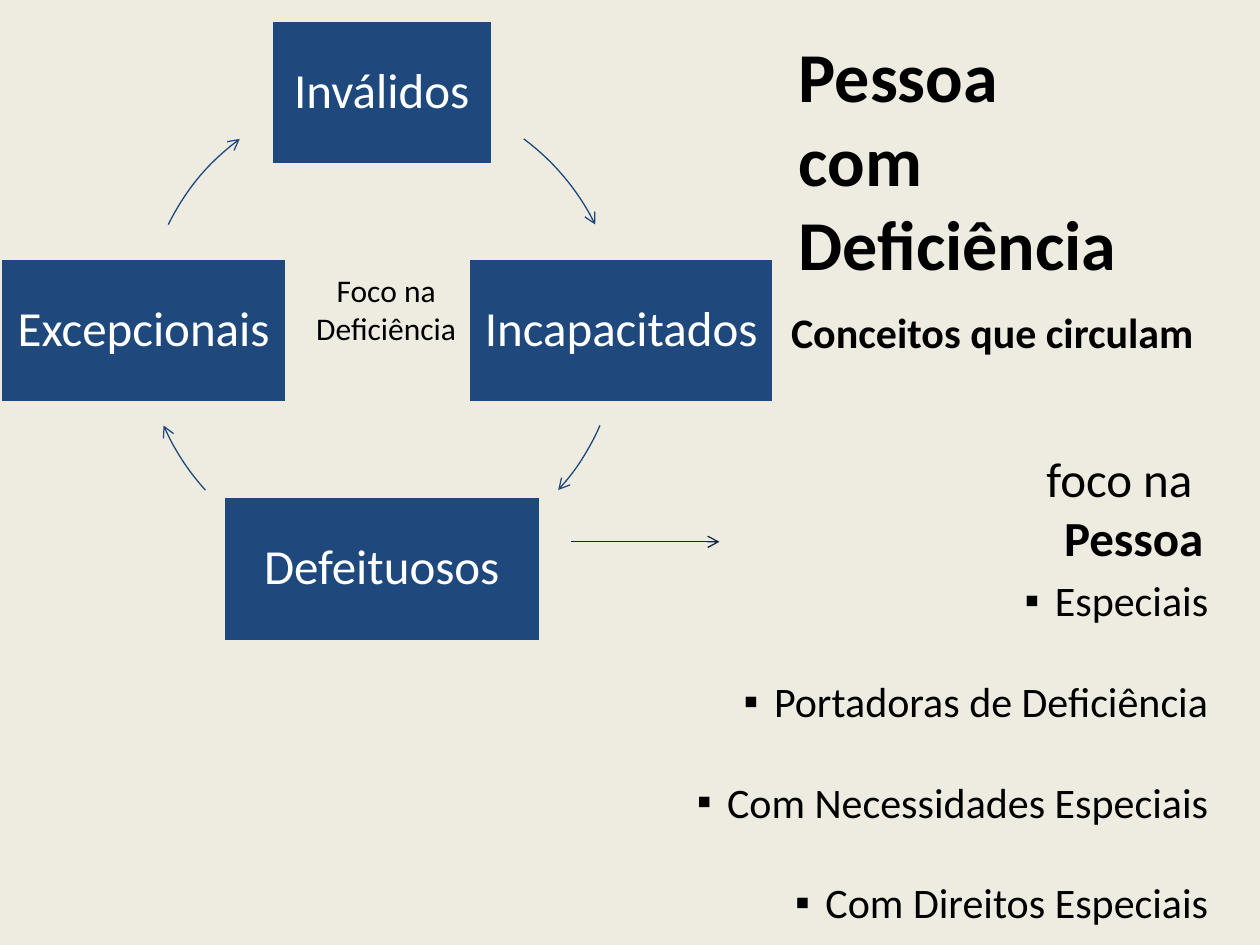
from pptx import Presentation
from pptx.dml.color import RGBColor
from pptx.enum.shapes import MSO_CONNECTOR as Link, MSO_SHAPE as Kind
from pptx.enum.text import MSO_ANCHOR as Anchor, MSO_AUTO_SIZE as Fit, PP_ALIGN as Align
from pptx.oxml.ns import qn
from pptx.util import Inches, Pt
from lxml.etree import SubElement

WIDE, HIGH = 10, 7.5
SAND, NAVY, DARK, BLACK, WHITE = "EEECE1", "1F497D", "0F243E", "000000", "FFFFFF"
RING = (1.14, 0.73, 3.78, 3.78)
TOP, PITCH, TALL = 0.16, 1.89, 1.15

# word, row, centre, width
WORDS = [
    ("Inválidos", 0, 3.03, 1.76),
    ("Incapacitados", 1, 4.93, 2.42),
    ("Defeituosos", 2, 3.03, 2.52),
    ("Excepcionais", 1, 1.14, 2.27),
]
ARCS = [(306.6, 333.7), (23.6, 42.2), (137.8, 156.4), (206.3, 233.4)]
TITLE = ["Pessoa", "com Deficiência"]
ITEMS = ["Especiais", "Portadoras de Deficiência",
         "Com Necessidades Especiais", "Com Direitos Especiais"]
NOTES = [
    ((6.18, 2.38, 3.5, 0.51), Align.JUSTIFY, [("Conceitos que circulam ", 24, True)]),
    ((2.16, 2.1, 1.81, 0.71), Align.CENTER, [("Foco na Deficiência", 18, False)]),
    ((6.71, 3.51, 2.94, 1.04), Align.RIGHT, [("foco na ", 28, False), ("Pessoa", 28, True)]),
]


def tint(code):
    """Turn a hex string into a colour."""
    return RGBColor.from_string(code)


def style(thing, **form):
    """Set each attribute in the format."""
    for name, value in form.items():
        setattr(thing, name, value)


def place(shape, left, top, wide, high):
    """Move and size a shape in inches."""
    style(shape, left=Inches(left), top=Inches(top), width=Inches(wide), height=Inches(high))


def write(frame, rows, align, color=BLACK, anchor=Anchor.TOP, gap=0, bullet=None, lead=1.0):
    """Fill a frame with rows of text, size and weight."""
    style(frame, word_wrap=True, auto_size=Fit.NONE, vertical_anchor=anchor)
    for n, (text, size, bold) in enumerate(rows):
        para = frame.paragraphs[0] if n == 0 else frame.add_paragraph()
        style(para, alignment=align, line_spacing=lead,
              space_before=Pt(gap if n else 0), space_after=Pt(0))
        if bullet:
            props = para._p.get_or_add_pPr()
            props.set("marL", str(Inches(0.24)))
            props.set("indent", str(-Inches(0.24)))
            SubElement(props, qn("a:buFont"), typeface="Arial")
            SubElement(props, qn("a:buChar"), char=bullet)
        run = para.add_run()
        run.text = text
        style(run.font, name="Calibri", size=Pt(size), bold=bold)
        run.font.color.rgb = tint(color)


def point(shape, color):
    """Give a line its colour, width and arrowhead."""
    shape.line.color.rgb = tint(color)
    shape.line.width = Pt(0.75)
    SubElement(shape.line._get_or_add_ln(), qn("a:tailEnd"), type="arrow")


def ring(shapes):
    """Draw the boxes and the arcs between them."""
    for word, row, mid, wide in WORDS:
        box = shapes.add_shape(Kind.RECTANGLE, 0, 0, 0, 0)
        place(box, mid - wide / 2, TOP + row * PITCH, wide, TALL)
        box.shadow.inherit = False
        box.fill.solid()
        box.fill.fore_color.rgb = tint(NAVY)
        box.line.color.rgb = tint(SAND)
        box.line.width = Pt(2)
        sides = ("left", "top", "right", "bottom")
        style(box.text_frame, **{f"margin_{side}": Inches(0.12) for side in sides})
        write(box.text_frame, [(word, 28, False)], Align.CENTER, WHITE, Anchor.MIDDLE, lead=0.9)
    for turns in ARCS:
        arc = shapes.add_shape(Kind.ARC, 0, 0, 0, 0)
        place(arc, *RING)
        for n, turn in enumerate(turns):
            arc.adjustments[n] = turn * 0.6
        arc.shadow.inherit = False
        arc.fill.background()
        point(arc, NAVY)


def main():
    """Build the slide."""
    deck = Presentation()
    style(deck, slide_width=Inches(WIDE), slide_height=Inches(HIGH))
    slide = deck.slides.add_slide(deck.slide_layouts[1])
    slide.background.fill.solid()
    slide.background.fill.fore_color.rgb = tint(SAND)
    shapes = slide.shapes
    ring(shapes)
    title, body = slide.placeholders
    place(title, 6.24, 0.21, 2.94, 2.12)
    write(title.text_frame, [(text, 40, True) for text in TITLE], Align.JUSTIFY)
    place(body, 5.16, 4.51, 4.53, 3.33)
    write(body.text_frame, [(text, 24, False) for text in ITEMS], Align.RIGHT,
          gap=28.8, bullet="▪")
    for area, align, rows in NOTES:
        note = shapes.add_textbox(0, 0, 0, 0)
        place(note, *area)
        write(note.text_frame, rows, align)
    ends = [Inches(n) for n in (4.53, 4.3, 5.71, 4.3)]
    link = shapes.add_connector(Link.STRAIGHT, *ends)
    point(link, DARK)
    SubElement(link._element.spPr, qn("a:effectLst"))
    deck.save("out.pptx")


if __name__ == "__main__":
    main()
